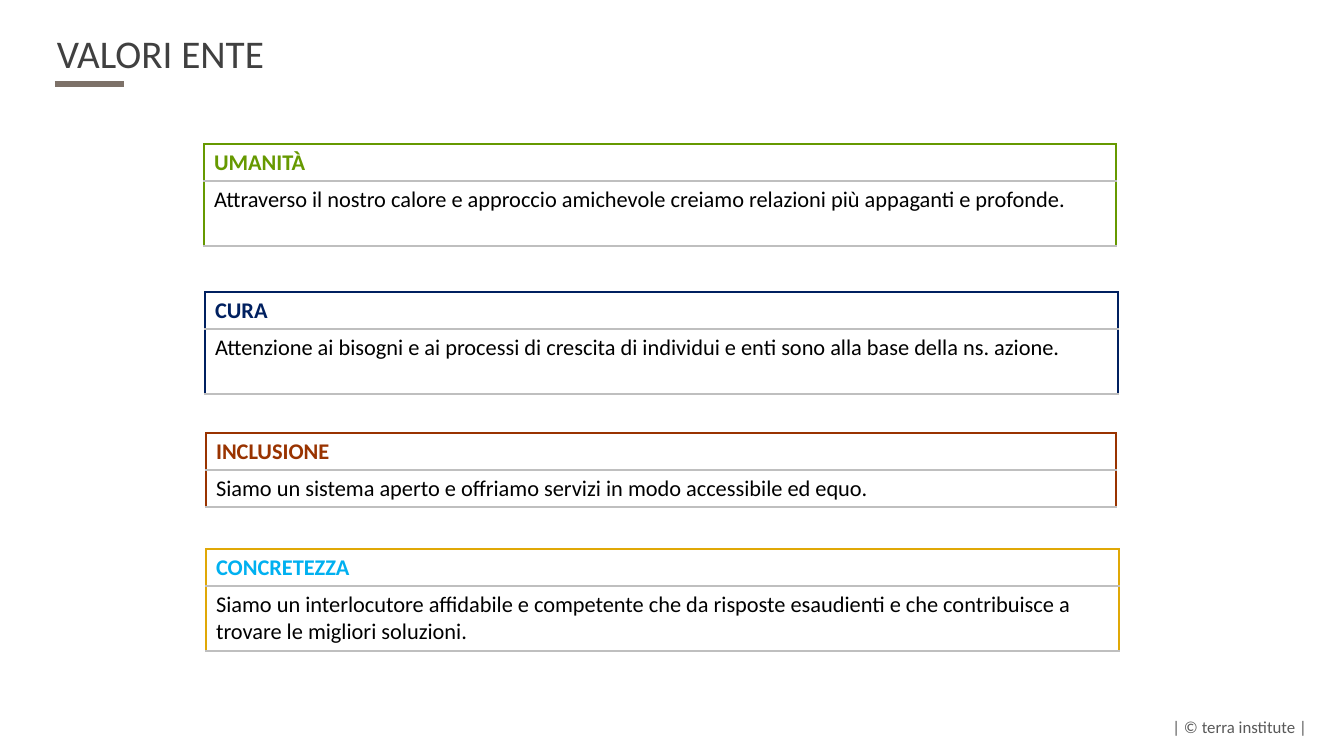
import pptx
import pptx.util
import pptx.dml.color
import pptx.enum.shapes
import pptx.enum.text
import pptx.oxml.ns
from lxml import etree

RGB = pptx.dml.color.RGBColor
GREEN = RGB(0x66, 0x99, 0x00)
NAVY = RGB(0x00, 0x20, 0x60)
RUST = RGB(0x99, 0x33, 0x00)
GOLD = RGB(0xE0, 0xA8, 0x07)
SKY = RGB(0x00, 0xB0, 0xF0)
RULE = RGB(0xBF, 0xBF, 0xBF)
BAR = RGB(0x7D, 0x71, 0x68)
TITLE = RGB(0x40, 0x40, 0x40)
FOOT = RGB(0x59, 0x59, 0x59)
BLACK = RGB(0, 0, 0)
WHITE = RGB(255, 255, 255)

FONT = "Calibri"
HEAD = 37  # height of a heading row

# heading, text, heading colour, edge colour, fill, (left, top, width, text height)
VALUES = [
    ("UMANITÀ",
     "Attraverso il nostro calore e approccio amichevole creiamo relazioni più "
     "appaganti e profonde.",
     GREEN, GREEN, WHITE, (204, 144, 912, 65)),
    ("CURA",
     "Attenzione ai bisogni e ai processi di crescita di individui e enti sono "
     "alla base della ns. azione.",
     NAVY, NAVY, None, (205, 292, 913, 65)),
    ("INCLUSIONE",
     "Siamo un sistema aperto e offriamo servizi in modo accessibile ed equo.",
     RUST, RUST, WHITE, (206, 433, 910, 37)),
    ("CONCRETEZZA",
     "Siamo un interlocutore affidabile e competente che da risposte esaudienti "
     "e che contribuisce a trovare le migliori soluzioni.",
     SKY, GOLD, WHITE, (206, 549, 913, 65)),
]


def px(n):
    return pptx.util.Emu(round(n * 914400 / 100.8))


def write(para, text, size, color, bold=False):
    run = para.add_run()
    run.text = text
    run.font.name = FONT
    run.font.size = pptx.util.Pt(size)
    run.font.bold = bold
    run.font.color.rgb = color


def add_label(slide, text, box, size, color, align):
    frame = slide.shapes.add_textbox(*map(px, box)).text_frame
    frame.word_wrap = True
    frame.vertical_anchor = pptx.enum.text.MSO_ANCHOR.MIDDLE
    frame.paragraphs[0].alignment = align
    write(frame.paragraphs[0], text, size, color)


def edge_cell(cell, sides):
    """Draw 1 pt borders; sides maps L, R, T, B, in that order, to colours."""
    qn = pptx.oxml.ns.qn
    props = cell._tc.get_or_add_tcPr()
    for side, color in sides.items():
        line = etree.SubElement(props, qn("a:ln" + side), w="12700")
        fill = etree.SubElement(line, qn("a:solidFill"))
        etree.SubElement(fill, qn("a:srgbClr"), val=str(color))


def add_value(slide, head, text, tint, edge, fill, box):
    left, top, width, tall = box
    frame = slide.shapes.add_table(
        2, 1, px(left), px(top), px(width), px(HEAD + tall))
    table = frame.table
    table.first_row = table.horz_banding = False
    rows = [(head, tint, True, HEAD, edge), (text, BLACK, False, tall, RULE)]
    for i, (words, color, bold, height, upper) in enumerate(rows):
        table.rows[i].height = px(height)
        cell = table.cell(i, 0)
        write(cell.text_frame.paragraphs[0], words, 16, color, bold)
        edge_cell(cell, {"L": edge, "R": edge, "T": upper, "B": RULE})
        if fill is None:
            cell.fill.background()
        else:
            cell.fill.solid()
            cell.fill.fore_color.rgb = fill


def add_bar(slide):
    bar = slide.shapes.add_connector(
        pptx.enum.shapes.MSO_CONNECTOR.STRAIGHT, px(55), px(84), px(124), px(84))
    bar.line.color.rgb = BAR
    bar.line.width = pptx.util.Pt(4.5)
    etree.SubElement(bar._element.spPr, pptx.oxml.ns.qn("a:effectLst"))


def main():
    deck = pptx.Presentation()
    deck.slide_width, deck.slide_height = px(1344), px(756)
    slide = deck.slides.add_slide(deck.slide_layouts[6])
    align = pptx.enum.text.PP_ALIGN
    add_label(slide, "| © terra institute |", (1085, 712, 232, 30), 12, FOOT,
              align.RIGHT)
    add_bar(slide)
    add_label(slide, "VALORI ENTE", (47, 21, 953, 64), 28, TITLE, align.LEFT)
    for value in VALUES:
        add_value(slide, *value)
    deck.save("out.pptx")


if __name__ == "__main__":
    main()
